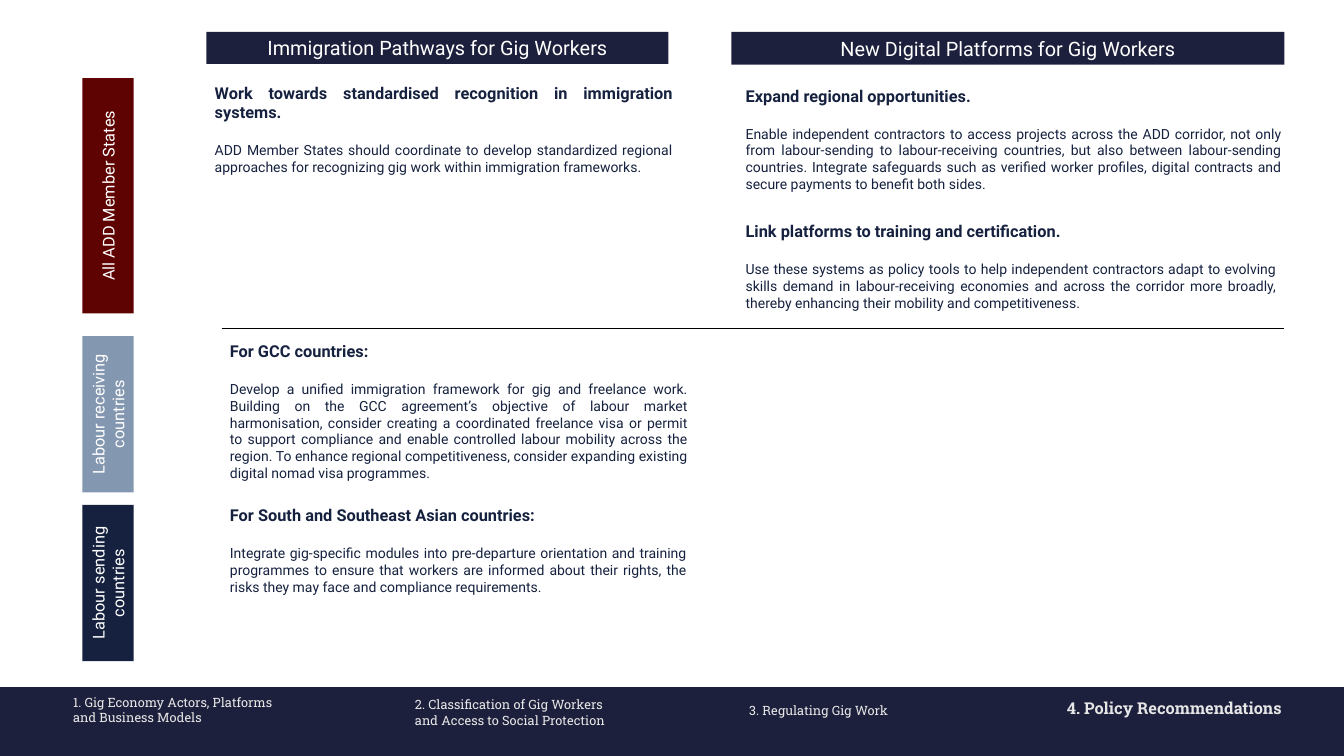
import pptx
import pptx.dml.color
import pptx.enum.shapes
import pptx.enum.text
import pptx.oxml.ns
import pptx.util
from dataclasses import dataclass
from lxml import etree

Pt = pptx.util.Pt
RGB = pptx.dml.color.RGBColor.from_string
ALIGN = pptx.enum.text.PP_ALIGN
ANCHOR = pptx.enum.text.MSO_ANCHOR
SHAPES = pptx.enum.shapes.MSO_SHAPE


@dataclass(frozen=True)
class Theme:
    font: str = "Roboto"
    footer_font: str = "Roboto Slab"
    bar: str = "1D203C"
    ink: str = "15213F"
    all_states: str = "5E0202"
    receiving: str = "8497B0"
    white: str = "FFFFFF"
    footer_ink: str = "E7E6E6"
    rule: str = "000000"
    header_size: int = 17
    heading_size: int = 14
    body_size: int = 12
    footer_size: int = 11
    heading_gap: int = 17


THEME = Theme()

HEADERS = [
    ("Immigration Pathways for Gig Workers", (177, 27.4, 396, 27.4)),
    ("New Digital Platforms for Gig Workers", (627, 27.4, 474, 28)),
]

COUNTRY_GROUPS = [
    ("All ADD Member States", THEME.all_states, 67, 201.6),
    ("Labour receiving countries", THEME.receiving, 288, 134),
    ("Labour sending countries", THEME.ink, 432.7, 134),
]

RECOMMENDATIONS = [
    ((177, 67.4, 407, 88), "Work towards standardised recognition in immigration systems.",
     "ADD Member States should coordinate to develop standardized regional approaches "
     "for recognizing gig work within immigration frameworks."),
    ((632, 70, 474, 100), "Expand regional opportunities.",
     "Enable independent contractors to access projects across the ADD corridor, not only "
     "from labour-sending to labour-receiving countries, but also between labour-sending "
     "countries. Integrate safeguards such as verified worker profiles, digital contracts "
     "and secure payments to benefit both sides."),
    ((632, 186, 469.5, 86), "Link platforms to training and certification.",
     "Use these systems as policy tools to help independent contractors adapt to evolving "
     "skills demand in labour-receiving economies and across the corridor more broadly, "
     "thereby enhancing their mobility and competitiveness."),
    ((190, 288.8, 407, 128), "For GCC countries:",
     "Develop a unified immigration framework for gig and freelance work. Building on the "
     "GCC agreement’s objective of labour market harmonisation, consider creating a "
     "coordinated freelance visa or permit to support compliance and enable controlled "
     "labour mobility across the region. To enhance regional competitiveness, consider "
     "expanding existing digital nomad visa programmes."),
    ((190, 429.4, 406, 85), "For South and Southeast Asian countries:",
     "Integrate gig-specific modules into pre-departure orientation and training programmes "
     "to ensure that workers are informed about their rights, the risks they may face and "
     "compliance requirements."),
]

FOOTER_SECTIONS = [
    (["1. Gig Economy Actors, Platforms", "and Business Models"], (62.6, 595.4, 181, 30)),
    (["2. Classification of Gig Workers", "and Access to Social Protection"], (355.7, 597.6, 175, 30)),
    (["3. Regulating Gig Work"], (642.2, 602.6, 160, 19)),
    (["4. Policy Recommendations"], (914.4, 598.3, 198, 30)),
]


def points(box):
    return [Pt(length) for length in box]


def write(paragraph, text, size, color, font=THEME.font, bold=False, align=ALIGN.LEFT):
    paragraph.alignment = align
    run = paragraph.add_run()
    run.text = text
    run.font.color.rgb = RGB(color)
    for attribute, value in {"name": font, "size": Pt(size), "bold": bold}.items():
        setattr(run.font, attribute, value)


def add_panel(slide, box, fill):
    panel = slide.shapes.add_shape(SHAPES.RECTANGLE, *points(box))
    panel.shadow.inherit = False
    panel.fill.solid()
    panel.fill.fore_color.rgb = RGB(fill)
    panel.line.fill.background()
    return panel


def add_label(slide, box, fill, text, size, upward=False):
    """Add a filled panel with centred white text, optionally reading upward."""
    frame = add_panel(slide, box, fill).text_frame
    frame.word_wrap = True
    frame.vertical_anchor = ANCHOR.MIDDLE
    if upward:
        frame._txBody.bodyPr.set("vert", "vert270")
    write(frame.paragraphs[0], text, size, THEME.white, align=ALIGN.CENTER)


def add_text_frame(slide, box):
    frame = slide.shapes.add_textbox(*points(box)).text_frame
    frame.word_wrap = True
    return frame


def add_recommendation(slide, box, heading, advice):
    frame = add_text_frame(slide, box)
    write(frame.paragraphs[0], heading, THEME.heading_size, THEME.ink,
          bold=True, align=ALIGN.JUSTIFY)
    body = frame.add_paragraph()
    body.space_before = Pt(THEME.heading_gap)
    write(body, advice, THEME.body_size, THEME.ink, align=ALIGN.JUSTIFY)


def add_footer_section(slide, lines, box, current):
    frame = add_text_frame(slide, box)
    for side in ("left", "top", "right", "bottom"):
        setattr(frame, f"margin_{side}", 0)
    size = THEME.heading_size if current else THEME.footer_size
    for index, line in enumerate(lines):
        paragraph = frame.add_paragraph() if index else frame.paragraphs[0]
        write(paragraph, line, size, THEME.footer_ink, THEME.footer_font, current)


def add_rule(slide, left, right, y):
    rule = slide.shapes.add_connector(
        pptx.enum.shapes.MSO_CONNECTOR.STRAIGHT, *points((left, y, right, y)))
    rule.line.color.rgb = RGB(THEME.rule)
    rule.line.width = Pt(0.5)
    etree.SubElement(rule._element.spPr, pptx.oxml.ns.qn("a:effectLst"))


def main():
    deck = pptx.Presentation()
    deck.slide_width, deck.slide_height = Pt(1152), Pt(648)
    slide = deck.slides.add_slide(deck.slide_layouts.get_by_name("Blank"))

    for title, box in HEADERS:
        add_label(slide, box, THEME.bar, title, THEME.header_size)
    for group, fill, top, height in COUNTRY_GROUPS:
        add_label(slide, (70.6, top, 44, height), fill, group, THEME.heading_size, upward=True)
    for box, heading, advice in RECOMMENDATIONS:
        add_recommendation(slide, box, heading, advice)
    add_rule(slide, 190, 1101, 281.5)

    add_panel(slide, (0, 589, 1152, 59), THEME.bar)
    for lines, box in FOOTER_SECTIONS:
        add_footer_section(slide, lines, box, current=lines == FOOTER_SECTIONS[-1][0])

    deck.save("out.pptx")


if __name__ == "__main__":
    main()
